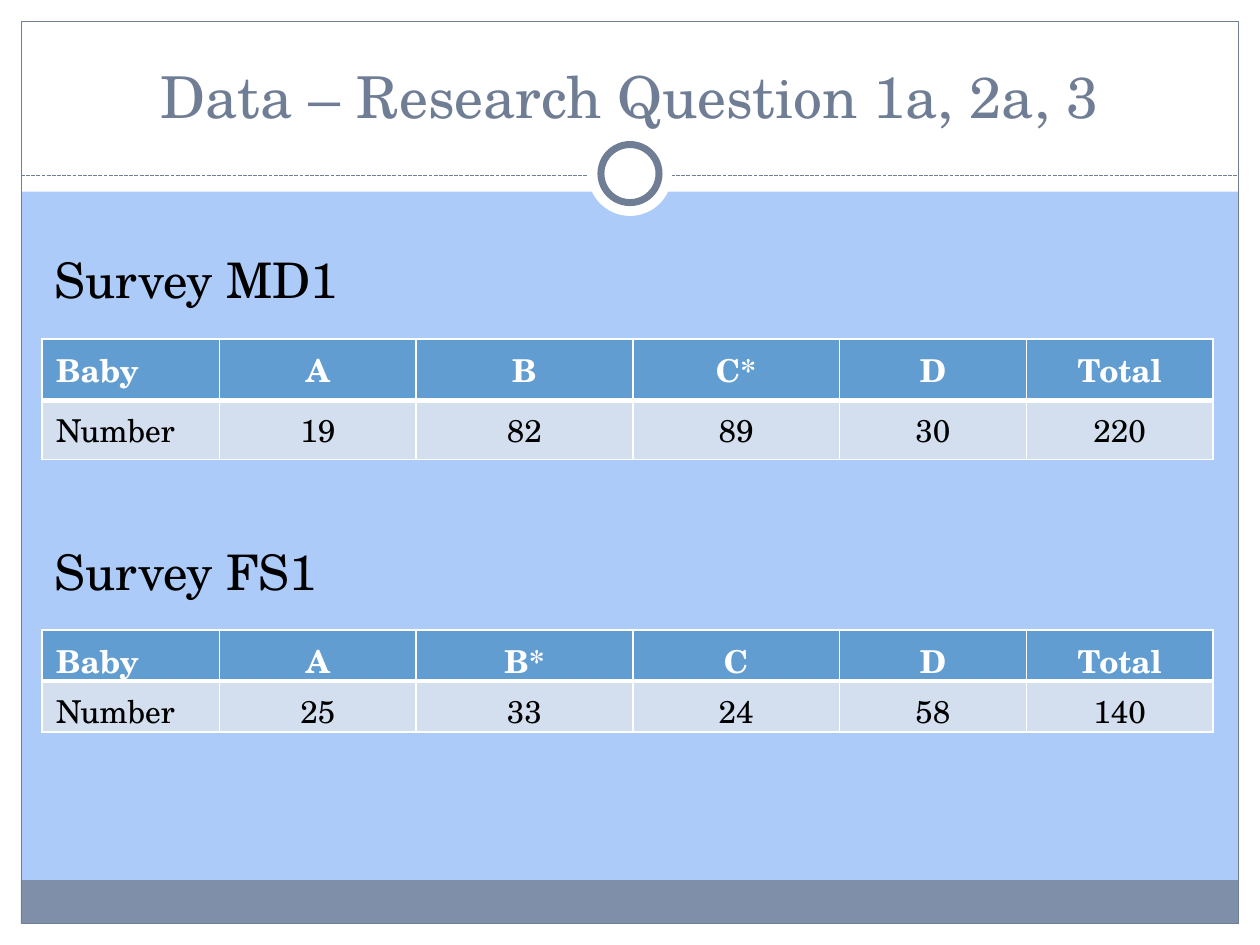
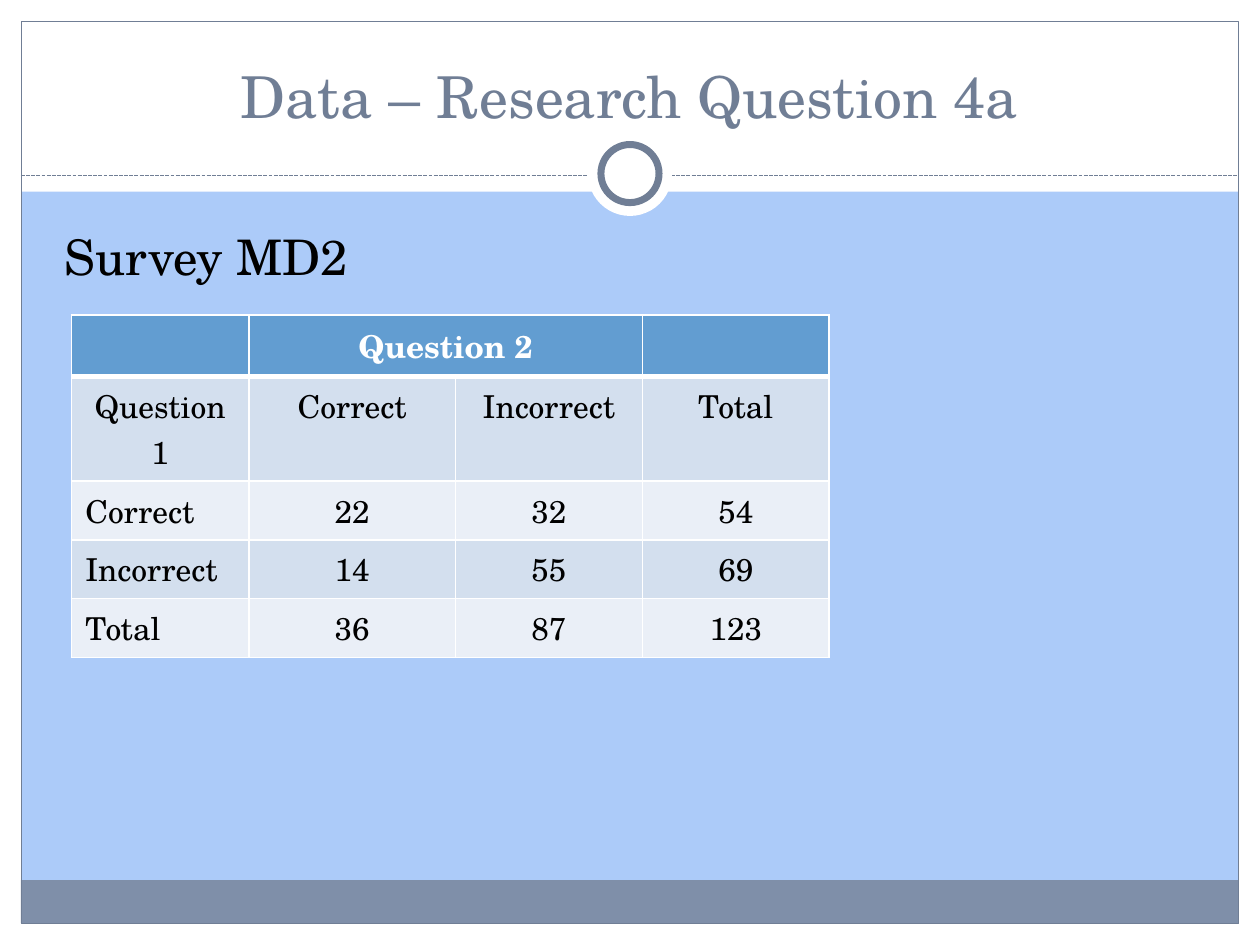
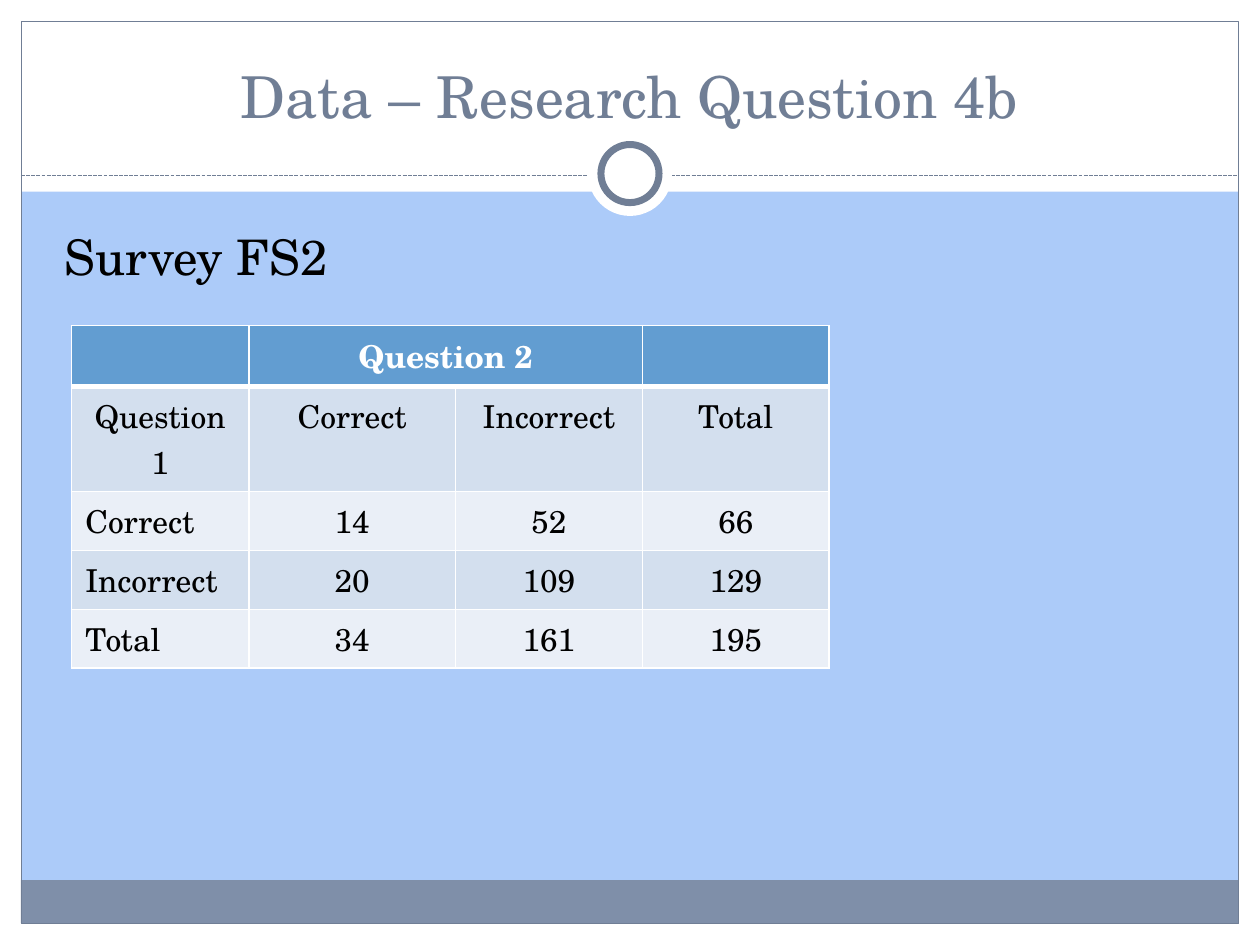
"""Build three survey data slides with a shared frame, title and table style."""
from lxml import etree
from pptx import Presentation
from pptx.dml.color import RGBColor
from pptx.enum.dml import MSO_LINE
from pptx.enum.shapes import MSO_CONNECTOR, MSO_SHAPE
from pptx.enum.text import MSO_ANCHOR, PP_ALIGN
from pptx.oxml.ns import qn
from pptx.util import Pt

RECTANGLE, OVAL = MSO_SHAPE.RECTANGLE, MSO_SHAPE.OVAL
STRAIGHT, DASH = MSO_CONNECTOR.STRAIGHT, MSO_LINE.SQUARE_DOT
LEFT, CENTER = PP_ALIGN.LEFT, PP_ALIGN.CENTER
TOP, BOTTOM = MSO_ANCHOR.TOP, MSO_ANCHOR.BOTTOM

FONT = "TeX Gyre Schola"
SKY, WHITE, BLACK, SLATE, FOOTER = "ACCBF9", "FFFFFF", "000000", "707E95", "7F8FA9"
HEADER, BANDS = "629DD1", ("D3DFEE", "EAEFF7")

WIDTH, HEIGHT, MARGIN = 720, 540, 12
BORDER = 12.2
RULE_TOP = 100.5
TITLE_BOX = (24, 18, 671.6, 60)
HEADING_SIZE = (300, 41)

FRAME = [
    (RECTANGLE, (0, HEIGHT - MARGIN, WIDTH, MARGIN), WHITE, None),
    (RECTANGLE, (0, 0, WIDTH, 109.6), WHITE, None),
    (RECTANGLE, (0, 0, MARGIN, HEIGHT), WHITE, None),
    (RECTANGLE, (WIDTH - MARGIN, 0, MARGIN, HEIGHT), WHITE, None),
    (RECTANGLE, (MARGIN, 503, WIDTH - 2 * MARGIN, 24.6), FOOTER, None),
    (RECTANGLE, (BORDER, BORDER, WIDTH - 2 * BORDER, HEIGHT - 2 * BORDER), None, 0.75),
]
MEDALLION = [
    (OVAL, (336, 75.4, 48, 48), WHITE, None),
    (OVAL, (343.4, 82.6, 33.2, 33.2), WHITE, 4),
]

TITLE_FORMAT = {"size": Pt(33), "name": FONT, "bold": False}
HEADING_FORMAT = {"size": Pt(28), "name": FONT, "bold": False}
HEADER_FORMAT = {"size": Pt(18), "name": FONT, "bold": True}
BODY_FORMAT = {"size": Pt(18), "name": FONT, "bold": False}

NORMAL_INSETS = {"margin_left": Pt(8), "margin_right": Pt(8),
                 "margin_top": Pt(3.6), "margin_bottom": Pt(3.6)}
TIGHT_INSETS = {**NORMAL_INSETS, "margin_bottom": Pt(0)}

COUNT_COLUMNS = (101.4, 112.4, 123.8, 118.1, 106.8, 106.8)
COUNT_HEIGHTS = (35.2, 33.6)
TIGHT_HEIGHTS = (29.2, 29.2)
CROSS_COLUMNS = (101.4, 118.1, 106.8, 106.8)
CROSS_HEIGHTS = (35, 60, 33.6, 33.6, 33.6)
ROW_QUESTION = "Question 1"
CROSS_HEAD = [("", "Question 2", "", ""),
              (ROW_QUESTION, "Correct", "Incorrect", "Total")]

SLIDES = [
    ("Data – Research Question 1a, 2a, 3", [
        {"heading": "Survey MD1", "heading_at": (24, 139), "table_at": (24, 193.8),
         "columns": COUNT_COLUMNS, "heights": COUNT_HEIGHTS,
         "insets": NORMAL_INSETS, "merge": None,
         "rows": [("Baby", "A", "B", "C*", "D", "Total"),
                  ("Number", "19", "82", "89", "30", "220")]},
        {"heading": "Survey FS1", "heading_at": (24, 306), "table_at": (24, 360),
         "columns": COUNT_COLUMNS, "heights": TIGHT_HEIGHTS,
         "insets": TIGHT_INSETS, "merge": None,
         "rows": [("Baby", "A", "B*", "C", "D", "Total"),
                  ("Number", "25", "33", "24", "58", "140")]},
    ]),
    ("Data – Research Question 4a", [
        {"heading": "Survey MD2", "heading_at": (30, 126), "table_at": (40.8, 180),
         "columns": CROSS_COLUMNS, "heights": CROSS_HEIGHTS,
         "insets": NORMAL_INSETS, "merge": (1, 2),
         "rows": CROSS_HEAD + [("Correct", "22", "32", "54"),
                               ("Incorrect", "14", "55", "69"),
                               ("Total", "36", "87", "123")]},
    ]),
    ("Data – Research Question 4b", [
        {"heading": "Survey FS2", "heading_at": (30, 126), "table_at": (40.8, 186),
         "columns": CROSS_COLUMNS, "heights": CROSS_HEIGHTS,
         "insets": NORMAL_INSETS, "merge": (1, 2),
         "rows": CROSS_HEAD + [("Correct", "14", "52", "66"),
                               ("Incorrect", "20", "109", "129"),
                               ("Total", "34", "161", "195")]},
    ]),
]


def points(values):
    return [Pt(value) for value in values]


def paint(fill, color):
    fill.solid()
    fill.fore_color.rgb = RGBColor.from_string(color)


def apply(target, values):
    for name, value in values.items():
        setattr(target, name, value)


def write(text_frame, text, alignment, color, font_format):
    paragraph = text_frame.paragraphs[0]
    paragraph.alignment = alignment
    run = paragraph.add_run()
    run.text = text
    apply(run.font, font_format)
    run.font.color.rgb = RGBColor.from_string(color)


def add_text(slide, box, text, alignment, anchor, color, font_format):
    text_frame = slide.shapes.add_textbox(*points(box)).text_frame
    apply(text_frame, {"word_wrap": True, "vertical_anchor": anchor})
    write(text_frame, text, alignment, color, font_format)


def add_shapes(slide, parts):
    for kind, box, fill, line_width in parts:
        shape = slide.shapes.add_shape(kind, *points(box))
        shape.shadow.inherit = False
        if fill:
            paint(shape.fill, fill)
        else:
            shape.fill.background()
        if line_width:
            paint(shape.line.fill, SLATE)
            shape.line.width = Pt(line_width)
        else:
            shape.line.fill.background()


def add_rule(slide):
    ends = points((MARGIN, RULE_TOP, WIDTH - MARGIN, RULE_TOP))
    rule = slide.shapes.add_connector(STRAIGHT, *ends)
    paint(rule.line.fill, SLATE)
    apply(rule.line, {"width": Pt(0.75), "dash_style": DASH})
    etree.SubElement(rule._element.spPr, qn("a:effectLst"))


def add_borders(cell, row_index):
    widths = {"L": 1, "R": 1, "T": 3 if row_index == 1 else 1,
              "B": 3 if row_index == 0 else 1}
    properties = cell._tc.get_or_add_tcPr()
    for position, (side, width) in enumerate(widths.items()):
        line = etree.Element(qn(f"a:ln{side}"), w=str(Pt(width)))
        fill = etree.SubElement(line, qn("a:solidFill"))
        etree.SubElement(fill, qn("a:srgbClr"), val=WHITE)
        properties.insert(position, line)


def add_table(slide, survey):
    rows, columns, heights = survey["rows"], survey["columns"], survey["heights"]
    box = (*survey["table_at"], sum(columns), sum(heights))
    table = slide.shapes.add_table(len(rows), len(columns), *points(box)).table
    apply(table, {"first_row": False, "horz_banding": False})
    for column, width in zip(table.columns, columns):
        column.width = Pt(width)
    for row_index, texts in enumerate(rows):
        table.rows[row_index].height = Pt(heights[row_index])
        is_header = row_index == 0
        fill = HEADER if is_header else BANDS[(row_index - 1) % 2]
        color, font_format = (WHITE, HEADER_FORMAT) if is_header else (BLACK, BODY_FORMAT)
        for column_index, text in enumerate(texts):
            cell = table.cell(row_index, column_index)
            apply(cell, survey["insets"])
            paint(cell.fill, fill)
            add_borders(cell, row_index)
            if text:
                centered = column_index > 0 or text == ROW_QUESTION
                write(cell.text_frame, text, CENTER if centered else LEFT, color, font_format)
    if survey["merge"]:
        first, last = survey["merge"]
        table.cell(0, first).merge(table.cell(0, last))


def main():
    presentation = Presentation()
    apply(presentation, {"slide_width": Pt(WIDTH), "slide_height": Pt(HEIGHT)})
    for title, surveys in SLIDES:
        slide = presentation.slides.add_slide(presentation.slide_layouts[6])
        paint(slide.background.fill, SKY)
        add_shapes(slide, FRAME)
        add_rule(slide)
        add_shapes(slide, MEDALLION)
        add_text(slide, TITLE_BOX, title, CENTER, BOTTOM, SLATE, TITLE_FORMAT)
        for survey in surveys:
            add_table(slide, survey)
            heading_box = (*survey["heading_at"], *HEADING_SIZE)
            add_text(slide, heading_box, survey["heading"], LEFT, TOP, BLACK, HEADING_FORMAT)
    presentation.save("out.pptx")


if __name__ == "__main__":
    main()
